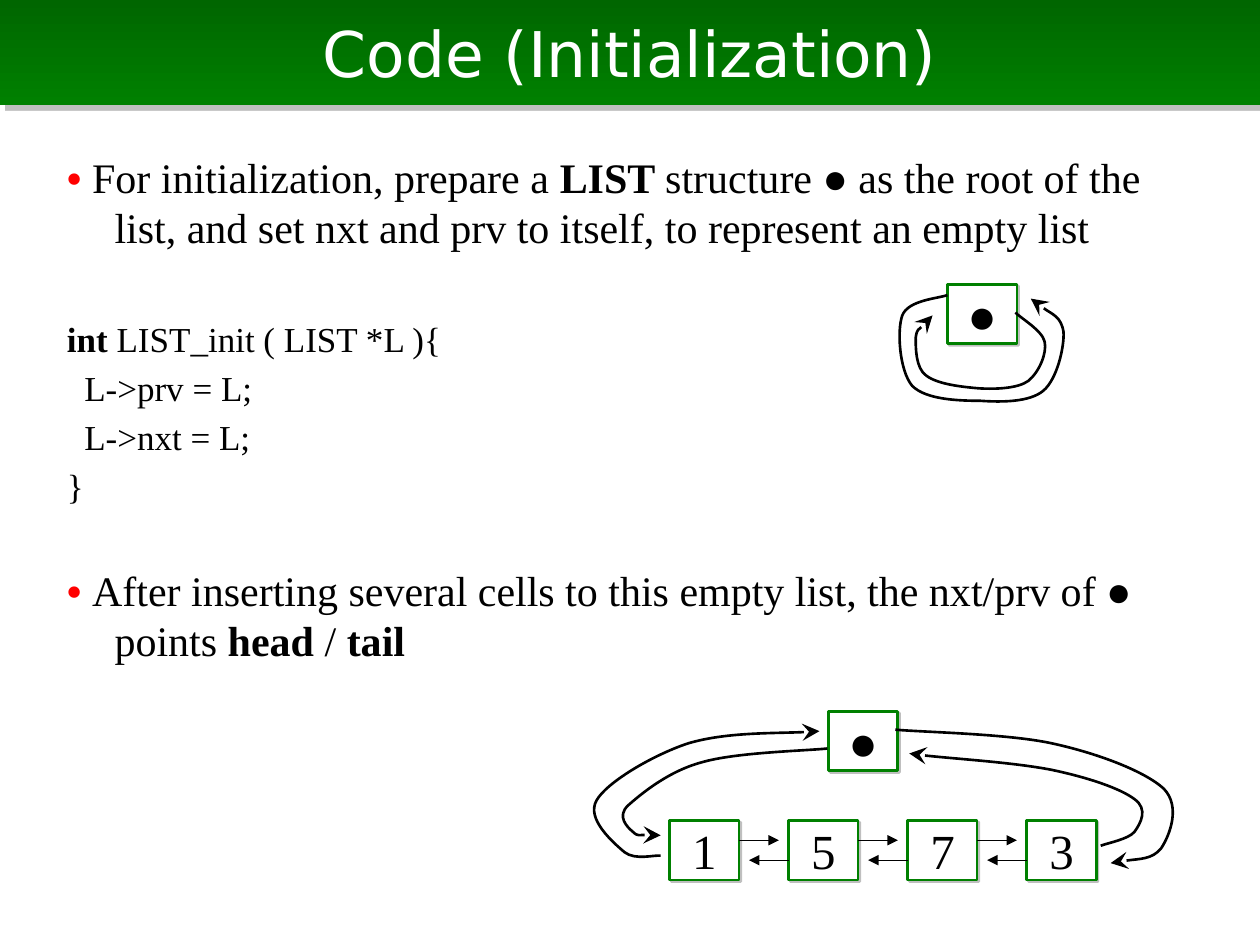
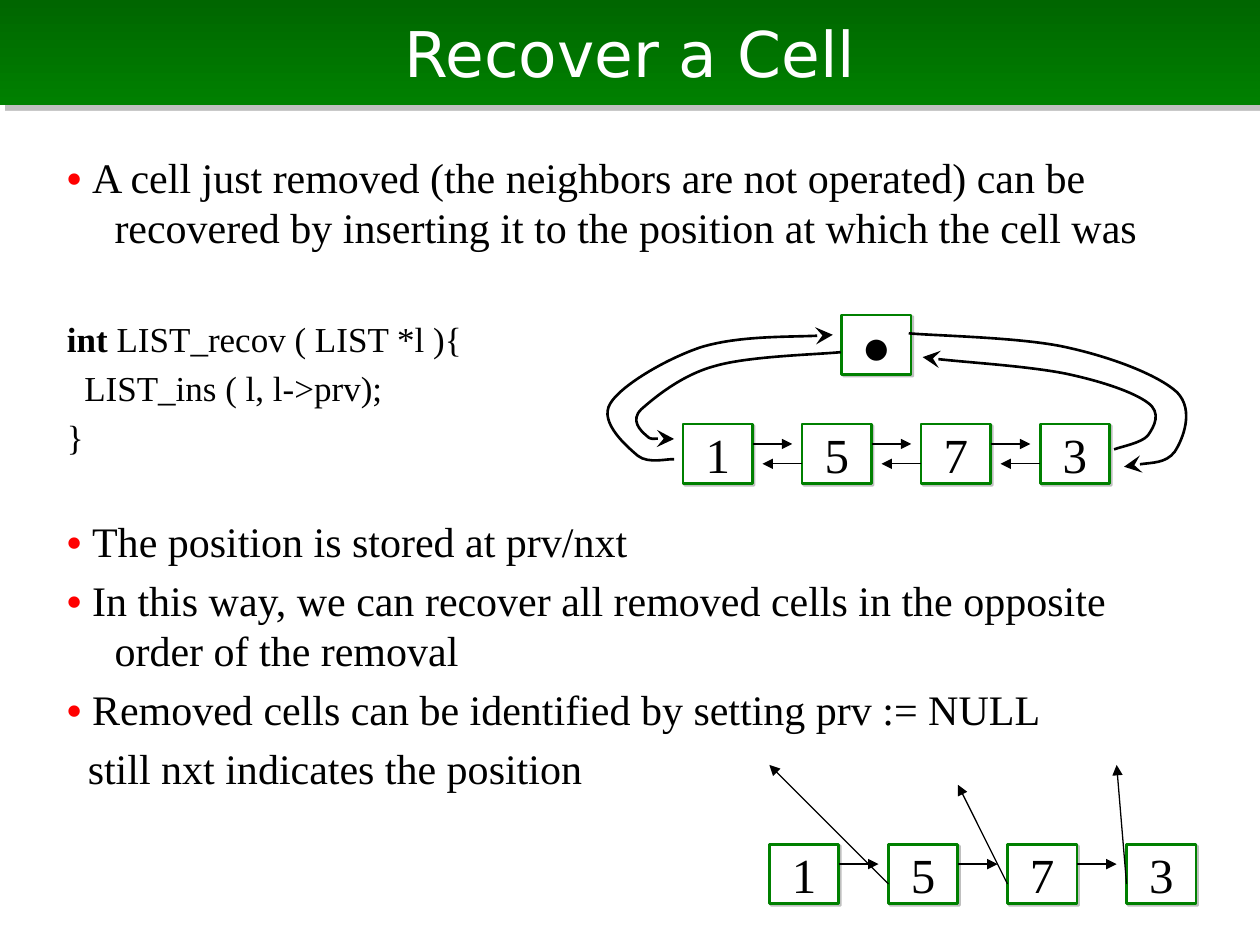
import pptx
import pptx.util
from lxml import etree
from pptx.dml.color import RGBColor
from pptx.enum.shapes import MSO_CONNECTOR, MSO_SHAPE
from pptx.enum.text import MSO_ANCHOR, PP_ALIGN
from pptx.oxml.ns import qn
from pptx.util import Cm, Pt

DARK_GREEN = RGBColor(0x00, 0x66, 0x00)
GREEN = RGBColor(0x00, 0x80, 0x00)
RED = RGBColor(0xFF, 0x00, 0x00)
BLACK = RGBColor(0x00, 0x00, 0x00)
WHITE = RGBColor(0xFF, 0xFF, 0xFF)
SHADOW = RGBColor(0x80, 0x80, 0x80)

TITLE_FONT = "DejaVu Sans"
BODY_FONT = "Times New Roman"

# Cells and the distances inside a linked list, in cm
CELL_W, CELL_H = 1.4, 1.2
CELL_PITCH = 2.4
ARROW_LENGTH = 0.8
NEXT_Y, PREV_Y = 0.4, 0.8
ROOT_DX, ROOT_DY = 3.2, -2.2

# Space before paragraphs, in points
BULLET_GAP, CODE_GAP = 4.8, 4
BEFORE_CODE, AFTER_CODE = 37.7, 33

# Curves: a start point, then three points per cubic segment, in cm.
# Ring curves count from the first cell, loop curves from the root cell.
RING_CURVES = [
    ("tail", [(4.55, -1.83),
              (5.08, -1.78), (6.83, -1.75), (7.72, -1.55),
              (8.64, -1.35), (9.58, -0.99), (9.96, -0.64),
              (10.31, -0.28), (10.08, 0.3), (9.91, 0.56),
              (9.73, 0.79), (9.09, 0.81), (8.89, 0.86)]),
    ("head", [(4.83, -1.35),
              (5.31, -1.27), (6.93, -1.17), (7.7, -1.02),
              (8.46, -0.86), (9.09, -0.64), (9.37, -0.43),
              (9.65, -0.23), (9.5, 0.05), (9.37, 0.23),
              (9.25, 0.38), (8.81, 0.46), (8.69, 0.51)]),
    ("head", [(-0.18, 0.3),
              (-0.25, 0.28), (-0.64, 0.33), (-0.74, 0.23),
              (-0.86, 0.13), (-1.07, -0.08), (-0.84, -0.3),
              (-0.58, -0.53), (-0.03, -0.99), (0.64, -1.17),
              (1.32, -1.37), (2.67, -1.4), (3.18, -1.45)]),
    ("tail", [(-0.18, 0.71),
              (-0.3, 0.69), (-0.69, 0.81), (-0.91, 0.64),
              (-1.12, 0.46), (-1.7, -0.03), (-1.47, -0.41),
              (-1.27, -0.76), (-0.38, -1.3), (0.36, -1.55),
              (1.12, -1.78), (2.46, -1.75), (3.02, -1.8)]),
]
LOOP_CURVES = [
    ("tail", [(1.37, 0.58),
              (1.47, 0.69), (1.91, 0.94), (1.96, 1.17),
              (2.01, 1.4), (1.85, 1.78), (1.63, 1.96),
              (1.42, 2.11), (0.99, 2.13), (0.64, 2.11),
              (0.3, 2.08), (-0.2, 2.03), (-0.43, 1.85),
              (-0.64, 1.7), (-0.64, 1.3), (-0.64, 1.09),
              (-0.61, 0.89), (-0.36, 0.74), (-0.3, 0.64)]),
    ("head", [(1.68, 0.3),
              (1.78, 0.41), (2.29, 0.66), (2.34, 0.97),
              (2.36, 1.27), (2.21, 1.93), (1.93, 2.16),
              (1.65, 2.39), (1.09, 2.39), (0.66, 2.36),
              (0.23, 2.36), (-0.43, 2.34), (-0.71, 2.06),
              (-0.97, 1.75), (-1.02, 0.94), (-0.91, 0.64),
              (-0.79, 0.33), (-0.2, 0.3), (0, 0.23)]),
]


# Shared formatting
def add_run(p, text, size, color=BLACK, bold=False, font=BODY_FONT):
    r = p.add_run()
    r.text = text
    r.font.name = font
    r.font.size = Pt(size)
    r.font.bold = bold
    r.font.color.rgb = color


def add_shadow(shape, distance):
    shape.shadow.inherit = False
    effects = shape._element.spPr.find(qn("a:effectLst"))
    shadow = etree.SubElement(effects, qn("a:outerShdw"),
                              dist=str(Pt(distance)), dir="2700000",
                              algn="ctr", rotWithShape="0")
    color = etree.SubElement(shadow, qn("a:srgbClr"), val=str(SHADOW))
    etree.SubElement(color, qn("a:alpha"), val="50000")


def style_line(shape, width, end, kind, size):
    shape.line.color.rgb = BLACK
    shape.line.width = Pt(width)
    etree.SubElement(shape.line._get_or_add_ln(), qn(f"a:{end}End"),
                     type=kind, w=size, len=size)


def add_box(s, x, y, w, h, text, size, color, font):
    sp = s.shapes.add_shape(MSO_SHAPE.RECTANGLE, Cm(x), Cm(y), Cm(w), Cm(h))
    tf = sp.text_frame
    tf.vertical_anchor = MSO_ANCHOR.MIDDLE
    p = tf.paragraphs[0]
    p.alignment = PP_ALIGN.CENTER
    add_run(p, text, size, color, font=font)
    return sp


# Title band
def add_title(s, text):
    sp = add_box(s, 0, 0, 25.4, 2.12, text, 36, WHITE, TITLE_FONT)
    sp.text_frame.word_wrap = True
    sp.line.fill.background()
    sp.fill.gradient()
    sp.fill.gradient_angle = 270
    for stop, color in zip(sp.fill.gradient_stops, (DARK_GREEN, GREEN)):
        stop.color.rgb = color
    add_shadow(sp, 4.2)


# Body text: each paragraph is (kind, space before, runs),
# where a run is (text, bold)
def add_body(s, height, paragraphs):
    tf = s.shapes.add_textbox(Cm(1.1), Cm(2.92), Cm(22.6), Cm(height)).text_frame
    tf.word_wrap = True
    for i, (kind, gap, runs) in enumerate(paragraphs):
        p = tf.add_paragraph() if i else tf.paragraphs[0]
        p.space_before = Pt(gap)
        left, first = {"bullet": (0.96, -0.96), "plain": (0.42, 0),
                       "code": (0, 0), "inner code": (0.35, 0)}[kind]
        pPr = p._p.get_or_add_pPr()
        pPr.set("marL", str(Cm(left)))
        pPr.set("indent", str(Cm(first)))
        if kind == "bullet":
            add_run(p, "• ", 24, RED, True)
        for text, bold in runs:
            add_run(p, text, 20 if "code" in kind else 24, bold=bold)


def bullet(*runs, gap=BULLET_GAP):
    return "bullet", gap, runs


def code(signature, *lines):
    """Paragraphs of a function whose return type is int."""
    return [("code", BEFORE_CODE, [("int ", True), (signature, False)]),
            *[("inner code", CODE_GAP, [(line, False)]) for line in lines],
            ("code", CODE_GAP, [("}", False)])]


# Linked lists
def add_cell(s, x, y, label):
    sp = add_box(s, x, y, CELL_W, CELL_H, label, 28, BLACK, BODY_FONT)
    sp.text_frame.word_wrap = False
    sp.fill.solid()
    sp.fill.fore_color.rgb = WHITE
    sp.line.color.rgb = GREEN
    sp.line.width = Pt(1.5)
    add_shadow(sp, 1.4)


def add_arrow(s, x, y, dx, dy=0):
    c = s.shapes.add_connector(MSO_CONNECTOR.STRAIGHT, Cm(x), Cm(y),
                               Cm(x + dx), Cm(y + dy))
    style_line(c, 0.75, "tail", "triangle", "med")
    etree.SubElement(c._element.spPr, qn("a:effectLst"))


def bend_lines(shape):
    """Turn each three line segments of a freeform into one cubic Bézier."""
    lines = list(shape._element.iter(qn("a:lnTo")))
    for i in range(0, len(lines), 3):
        first = lines[i]
        for line in lines[i + 1:i + 3]:
            first.append(line[0])
            line.getparent().remove(line)
        curve = etree.Element(qn("a:cubicBezTo"))
        curve.extend(list(first))
        first.getparent().replace(first, curve)


def add_curves(s, x, y, curves):
    for end, points in curves:
        start, *rest = [(Cm(x + dx), Cm(y + dy)) for dx, dy in points]
        builder = s.shapes.build_freeform(*start)
        builder.add_line_segments(rest, close=False)
        sp = builder.convert_to_shape()
        bend_lines(sp)
        sp.shadow.inherit = False
        sp.fill.background()
        style_line(sp, 1.5, end, "stealth", "lg")


def add_list(s, x, y, prev_arrows):
    """Cells with arrows to the next cell; prev_arrows holds (dx, dy) of the others."""
    labels = "1573"
    for i, label in enumerate(labels):
        left = x + i * CELL_PITCH
        add_cell(s, left, y, label)
        if i < len(labels) - 1:
            add_arrow(s, left + CELL_W, y + NEXT_Y, ARROW_LENGTH)
        if i > 0:
            add_arrow(s, left, y + PREV_Y, *prev_arrows[i - 1])


def add_ring(s, x, y):
    add_cell(s, x + ROOT_DX, y + ROOT_DY, "●")
    add_curves(s, x, y, RING_CURVES)
    add_list(s, x, y, [(-ARROW_LENGTH, 0)] * 3)


def add_slide(prs, title):
    s = prs.slides.add_slide(prs.slide_layouts[6])
    add_title(s, title)
    return s


def main():
    prs = pptx.Presentation()
    prs.slide_width, prs.slide_height = Cm(25.4), Cm(19.05)

    # Initialization
    s = add_slide(prs, "Code (Initialization)")
    add_body(s, 11.2, [
        bullet(("For initialization, prepare a ", False), ("LIST ", True),
               ("structure ● as the root of the list, and set nxt and prv "
                "to itself, to represent an empty list", False)),
        *code("LIST_init ( LIST *L ){", "L->prv = L;", "L->nxt = L;"),
        bullet(("After inserting several cells to this empty list, "
                "the nxt/prv of ● points ", False),
               ("head", True), (" / ", False), ("tail", True), gap=AFTER_CODE),
    ])
    add_cell(s, 19.1, 5.73, "●")
    add_curves(s, 19.1, 5.72, LOOP_CURVES)
    add_ring(s, 13.5, 16.54)

    # Recovery
    s = add_slide(prs, "Recover a Cell")
    add_body(s, 13.79, [
        bullet(("A cell just removed (the neighbors are not operated) can be "
                "recovered by inserting it to the position at which the cell was",
                False)),
        *code("LIST_recov ( LIST *l ){", "LIST_ins ( l, l->prv);"),
        bullet(("The position is stored at prv/nxt", False), gap=AFTER_CODE),
        bullet(("In this way, we can recover all removed cells in the opposite "
                "order of the removal", False)),
        bullet(("Removed cells can be identified by setting prv := NULL", False)),
        ("plain", BULLET_GAP, [("still nxt indicates the position", False)]),
    ])
    add_ring(s, 13.77, 8.55)
    add_list(s, 15.51, 17.02, [(-2.4, -2.4), (-1, -2), (-0.2, -2.4)])

    prs.save("out.pptx")


if __name__ == "__main__":
    main()
